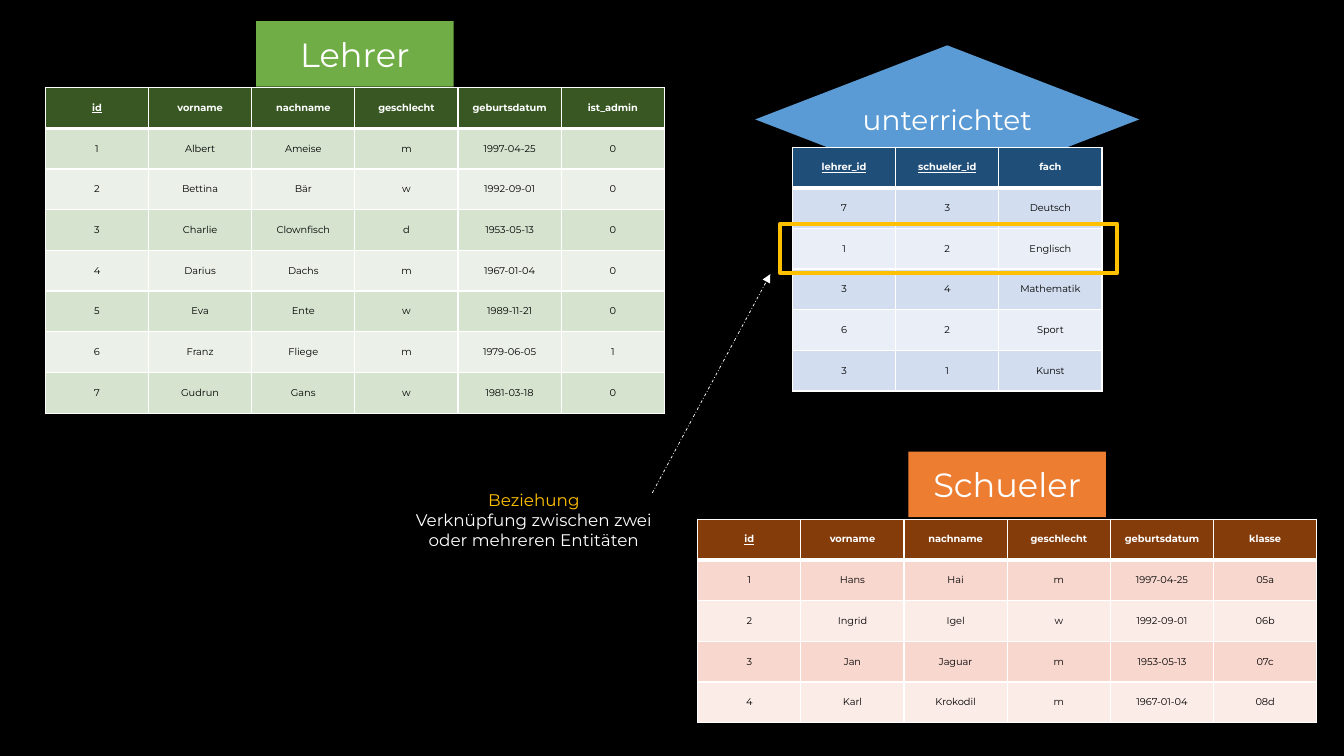
from dataclasses import dataclass

from lxml import etree
from pptx import Presentation
from pptx import util as u
from pptx.dml import color
from pptx.enum import dml, shapes, text
from pptx.oxml import ns

FONT = "Montserrat"
COLORS = {
    "black": "000000",
    "white": "FFFFFF",
    "gold": "FFC000",
    "green": "70AD47",
    "green_header": "385723",
    "green_odd": "D5E3CF",
    "green_even": "EBF1E9",
    "orange": "ED7D31",
    "orange_header": "843C0B",
    "orange_odd": "F8D7CE",
    "orange_even": "FCECE8",
    "blue": "5B9BD5",
    "blue_header": "1F4E79",
    "blue_odd": "D2DEEF",
    "blue_even": "EAEFF7",
}
PERSON_COLUMNS = "id vorname nachname geschlecht geburtsdatum"


@dataclass(frozen=True)
class Box:
    left: float
    top: float
    width: float
    height: float

    def lengths(self) -> list:
        return [u.Inches(value) for value in (self.left, self.top, self.width, self.height)]


@dataclass(frozen=True)
class Relation:
    name: str
    label_shape: shapes.MSO_SHAPE
    label_box: Box
    label_size: int
    table_box: Box
    hue: str
    keys: int
    rows: list[str]


RELATIONS = [
    Relation("unterrichtet", shapes.MSO_SHAPE.FLOWCHART_DECISION, Box(7.49, 0.45, 3.81, 1.47), 20,
             Box(7.86, 1.46, 3.07, 2.42), "blue", 2, [
                 "lehrer_id schueler_id fach",
                 "7 3 Deutsch",
                 "1 2 Englisch",
                 "3 4 Mathematik",
                 "6 2 Sport",
                 "3 1 Kunst",
             ]),
    Relation("Lehrer", shapes.MSO_SHAPE.RECTANGLE, Box(2.54, 0.21, 1.96, 0.65), 24,
             Box(0.45, 0.87, 6.14, 3.23), "green", 1, [
                 f"{PERSON_COLUMNS} ist_admin",
                 "1 Albert Ameise m 1997-04-25 0",
                 "2 Bettina Bär w 1992-09-01 0",
                 "3 Charlie Clownfisch d 1953-05-13 0",
                 "4 Darius Dachs m 1967-01-04 0",
                 "5 Eva Ente w 1989-11-21 0",
                 "6 Franz Fliege m 1979-06-05 1",
                 "7 Gudrun Gans w 1981-03-18 0",
             ]),
    Relation("Schueler", shapes.MSO_SHAPE.RECTANGLE, Box(9.01, 4.48, 1.96, 0.65), 24,
             Box(6.92, 5.15, 6.14, 2.02), "orange", 1, [
                 f"{PERSON_COLUMNS} klasse",
                 "1 Hans Hai m 1997-04-25 05a",
                 "2 Ingrid Igel w 1992-09-01 06b",
                 "3 Jan Jaguar m 1953-05-13 07c",
                 "4 Karl Krokodil m 1967-01-04 08d",
             ]),
]


def rgb(name: str) -> color.RGBColor:
    return color.RGBColor.from_string(COLORS[name])


def write(paragraph, content: str, *, size: float, hue: str = "white",
          bold: bool = False, underline: bool = False) -> None:
    paragraph.alignment = text.PP_ALIGN.CENTER
    run = paragraph.add_run()
    run.text = content
    run.font.name = FONT
    run.font.size = u.Pt(size)
    run.font.color.rgb = rgb(hue)
    run.font.bold = bold
    run.font.underline = underline


def add_label(slide, relation: Relation) -> None:
    shape = slide.shapes.add_shape(relation.label_shape, *relation.label_box.lengths())
    shape.shadow.inherit = False
    shape.fill.solid()
    shape.fill.fore_color.rgb = rgb(relation.hue)
    shape.line.fill.background()
    shape.text_frame.vertical_anchor = text.MSO_ANCHOR.MIDDLE
    write(shape.text_frame.paragraphs[0], relation.name, size=relation.label_size)


def set_borders(cell, **widths: float) -> None:
    properties = cell._tc.get_or_add_tcPr()
    for index, (side, width) in enumerate(widths.items()):
        line = etree.Element(ns.qn(f"a:ln{side}"), w=str(u.Pt(width)))
        fill = etree.SubElement(line, ns.qn("a:solidFill"))
        etree.SubElement(fill, ns.qn("a:srgbClr"), val=COLORS["white"])
        properties.insert(index, line)


def add_table(slide, relation: Relation) -> None:
    grid = [row.split() for row in relation.rows]
    frame = slide.shapes.add_table(len(grid), len(grid[0]), *relation.table_box.lengths())
    for row_index, row in enumerate(grid):
        header = row_index == 0
        band = "header" if header else "odd" if row_index % 2 else "even"
        for column_index, content in enumerate(row):
            cell = frame.table.cell(row_index, column_index)
            cell.vertical_anchor = text.MSO_ANCHOR.MIDDLE
            cell.fill.solid()
            cell.fill.fore_color.rgb = rgb(f"{relation.hue}_{band}")
            set_borders(cell, L=1, R=1, T=3 if row_index == 1 else 1, B=3 if header else 1)
            write(cell.text_frame.paragraphs[0], content, size=7,
                  hue="white" if header else "black", bold=header,
                  underline=header and column_index < relation.keys)


def add_arrow(slide, start: tuple[float, float], end: tuple[float, float]) -> None:
    points = [u.Inches(value) for value in (*start, *end)]
    arrow = slide.shapes.add_connector(shapes.MSO_CONNECTOR.STRAIGHT, *points)
    arrow.line.color.rgb = rgb("white")
    arrow.line.width = u.Pt(0.5)
    arrow.line.dash_style = dml.MSO_LINE.DASH_DOT
    etree.SubElement(arrow.line._get_or_add_ln(), ns.qn("a:tailEnd"), type="triangle")
    etree.SubElement(arrow._element.spPr, ns.qn("a:effectLst"))


def add_explanation(slide, box: Box) -> None:
    frame = slide.shapes.add_textbox(*box.lengths()).text_frame
    frame.word_wrap = True
    write(frame.paragraphs[0], "Beziehung", size=12, hue="gold")
    write(frame.add_paragraph(), "Verknüpfung zwischen zwei oder mehreren Entitäten", size=12)


def add_highlight(slide, box: Box) -> None:
    shape = slide.shapes.add_shape(shapes.MSO_SHAPE.RECTANGLE, *box.lengths())
    shape.shadow.inherit = False
    shape.fill.background()
    shape.line.color.rgb = rgb("gold")
    shape.line.width = u.Pt(3)


def main() -> None:
    presentation = Presentation()
    presentation.slide_width = u.Inches(13.33)
    presentation.slide_height = u.Inches(7.5)
    slide = presentation.slides.add_slide(presentation.slide_layouts[6])
    slide.background.fill.solid()
    slide.background.fill.fore_color.rgb = rgb("black")
    for relation in RELATIONS:
        add_label(slide, relation)
        add_table(slide, relation)
    add_arrow(slide, (6.47, 4.89), (7.64, 2.72))
    add_explanation(slide, Box(3.9, 4.81, 2.79, 0.71))
    add_highlight(slide, Box(7.74, 2.22, 3.34, 0.49))
    presentation.save("out.pptx")


if __name__ == "__main__":
    main()
